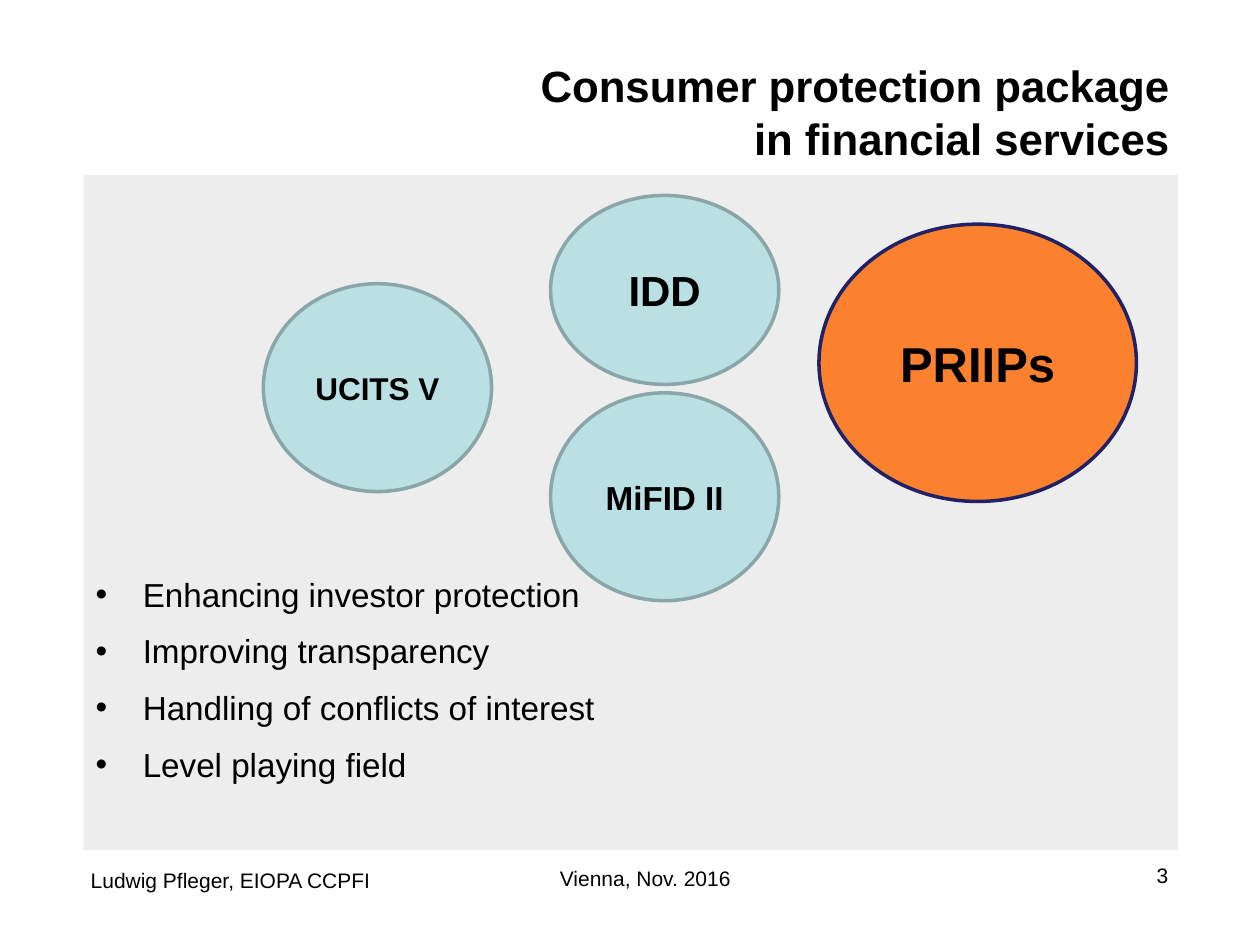
from dataclasses import dataclass

from lxml.etree import SubElement
from pptx import Presentation
from pptx.dml.color import RGBColor
from pptx.enum.shapes import MSO_SHAPE
from pptx.enum.text import MSO_ANCHOR, PP_ALIGN
from pptx.oxml.ns import qn
from pptx.shapes.autoshape import Shape
from pptx.slide import Slide
from pptx.text.text import _Paragraph
from pptx.util import Cm, Pt

COLORS = {
    "text": "000000",
    "panel": "EDEDED",
    "directive": "BBE0E3",
    "directive_line": "8AA6A8",
    "focus": "FF6600",
    "focus_line": "212166",
}


@dataclass(frozen=True)
class Label:
    text: str
    left: float
    top: float
    width: float
    height: float
    align: PP_ALIGN
    size: float = 12
    bold: bool = False
    anchor: MSO_ANCHOR = MSO_ANCHOR.TOP
    inset_top: float = 0.13


@dataclass(frozen=True)
class Regulation:
    name: str
    left: float
    top: float
    width: float
    height: float
    size: float
    fill: str = "directive"
    line: str = "directive_line"
    opacity: int = 100


LABELS = [
    Label("Consumer protection package\vin financial services", 1.75, 0.99, 22.07, 2.54,
          PP_ALIGN.RIGHT, 25, True, inset_top=0.2),
    Label("Ludwig Pfleger, EIOPA CCPFI", 1.58, 17.25, 8.2, 1, PP_ALIGN.LEFT,
          anchor=MSO_ANCHOR.MIDDLE),
    Label("Vienna, Nov. 2016", 8.69, 17.32, 8.64, 0.74, PP_ALIGN.CENTER),
    Label("3", 17.88, 17.25, 5.92, 0.79, PP_ALIGN.RIGHT),
]

REGULATIONS = [
    Regulation("PRIIPs", 16.51, 4.52, 6.4, 5.59, 28, "focus", "focus_line", 80),
    Regulation("IDD", 11.1, 3.94, 4.6, 3.81, 24),
    Regulation("UCITS V", 5.31, 5.72, 4.6, 4.19, 18),
    Regulation("MiFID II", 11.1, 7.92, 4.6, 4.19, 19),
]

GOALS = [
    "Enhancing investor protection",
    "Improving transparency",
    "Handling of conflicts of interest",
    "Level playing field",
]


def rgb(key: str) -> RGBColor:
    """Look up a named colour."""
    return RGBColor.from_string(COLORS[key])


def style(paragraph: _Paragraph, size: float, align: PP_ALIGN, bold: bool = False) -> None:
    """Set the alignment and font of a paragraph."""
    paragraph.alignment = align
    font = paragraph.font
    font.name, font.size, font.bold = "Arial", Pt(size), bold
    font.color.rgb = rgb("text")


def add_label(slide: Slide, label: Label) -> None:
    """Add the title or a footer text."""
    box = slide.shapes.add_textbox(
        Cm(label.left), Cm(label.top), Cm(label.width), Cm(label.height))
    frame = box.text_frame
    frame.word_wrap = True
    frame.vertical_anchor = label.anchor
    frame.margin_top = Cm(label.inset_top)
    frame.text = label.text
    style(frame.paragraphs[0], label.size, label.align, label.bold)


def add_filled(slide: Slide, kind: MSO_SHAPE, left: float, top: float,
               width: float, height: float, fill: str) -> Shape:
    """Add a flat shape with a solid fill."""
    shape = slide.shapes.add_shape(kind, Cm(left), Cm(top), Cm(width), Cm(height))
    shape.shadow.inherit = False
    shape.fill.solid()
    shape.fill.fore_color.rgb = rgb(fill)
    return shape


def add_goals(slide: Slide) -> None:
    """Add the grey panel with the bulleted goals."""
    panel = add_filled(slide, MSO_SHAPE.RECTANGLE, 1.68, 3.53, 22.07, 13.61, "panel")
    panel.line.fill.background()
    frame = panel.text_frame
    frame.word_wrap = True
    frame.vertical_anchor = MSO_ANCHOR.BOTTOM
    frame.margin_bottom = Cm(1.34)
    for index, goal in enumerate(GOALS):
        paragraph = frame.add_paragraph() if index else frame.paragraphs[0]
        paragraph.text = goal
        paragraph.line_spacing = 1.2
        paragraph.space_before = Pt(5 if index else 0)
        properties = paragraph._p.get_or_add_pPr()
        properties.set("marL", str(Cm(0.95)))
        properties.set("indent", str(-Cm(0.95)))
        SubElement(properties, qn("a:buFont"), typeface="Arial")
        SubElement(properties, qn("a:buChar"), char="•")
        style(paragraph, 19, PP_ALIGN.LEFT)


def add_regulation(slide: Slide, regulation: Regulation) -> None:
    """Add the ellipse of one regulation."""
    ellipse = add_filled(slide, MSO_SHAPE.OVAL, regulation.left, regulation.top,
                         regulation.width, regulation.height, regulation.fill)
    if regulation.opacity < 100:
        color = ellipse.fill._xPr.find(qn("a:solidFill"))[0]
        SubElement(color, qn("a:alpha"), val=str(regulation.opacity * 1000))
    ellipse.line.color.rgb = rgb(regulation.line)
    ellipse.line.width = Pt(2)
    frame = ellipse.text_frame
    frame.vertical_anchor = MSO_ANCHOR.MIDDLE
    frame.text = regulation.name
    style(frame.paragraphs[0], regulation.size, PP_ALIGN.CENTER, True)


def main() -> None:
    """Build the slide and save it."""
    deck = Presentation()
    deck.slide_width, deck.slide_height = Cm(25.4), Cm(19.05)
    slide = deck.slides.add_slide(deck.slide_layouts[6])
    for label in LABELS:
        add_label(slide, label)
    add_goals(slide)
    for regulation in REGULATIONS:
        add_regulation(slide, regulation)
    deck.save("out.pptx")


if __name__ == "__main__":
    main()
